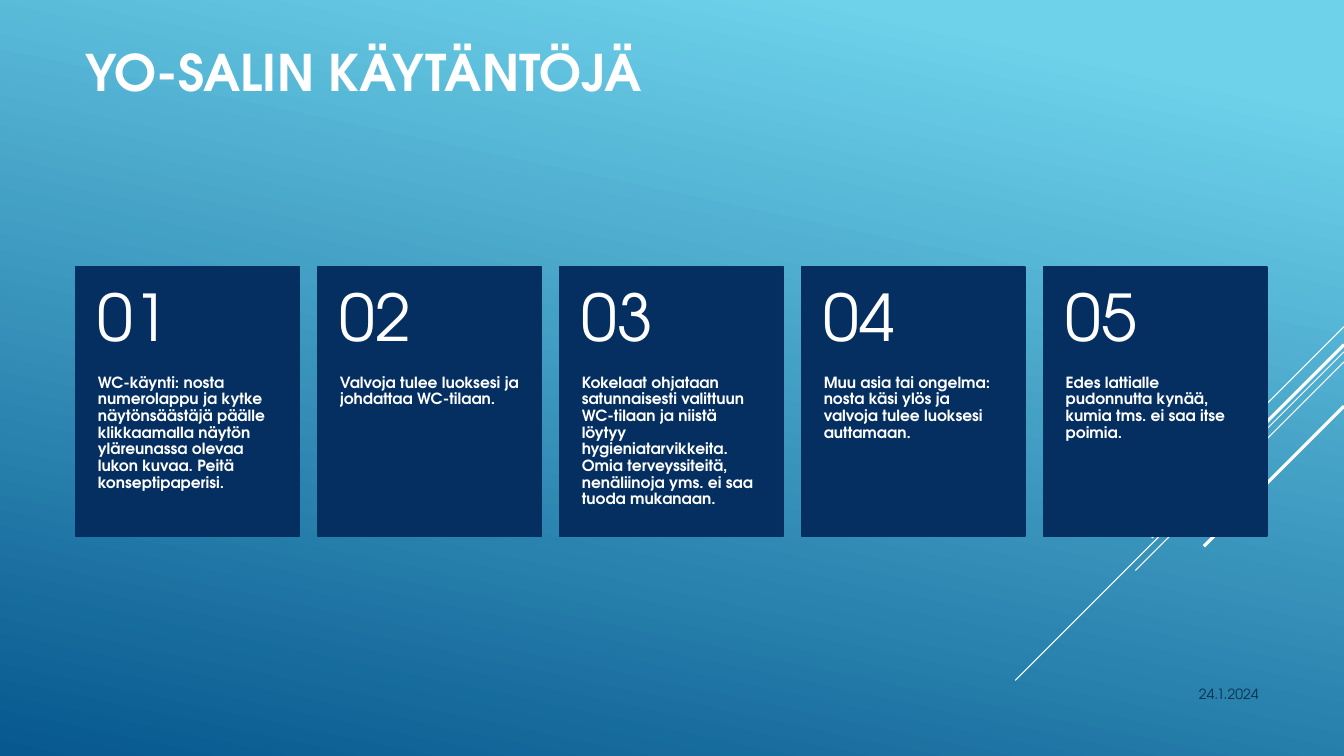
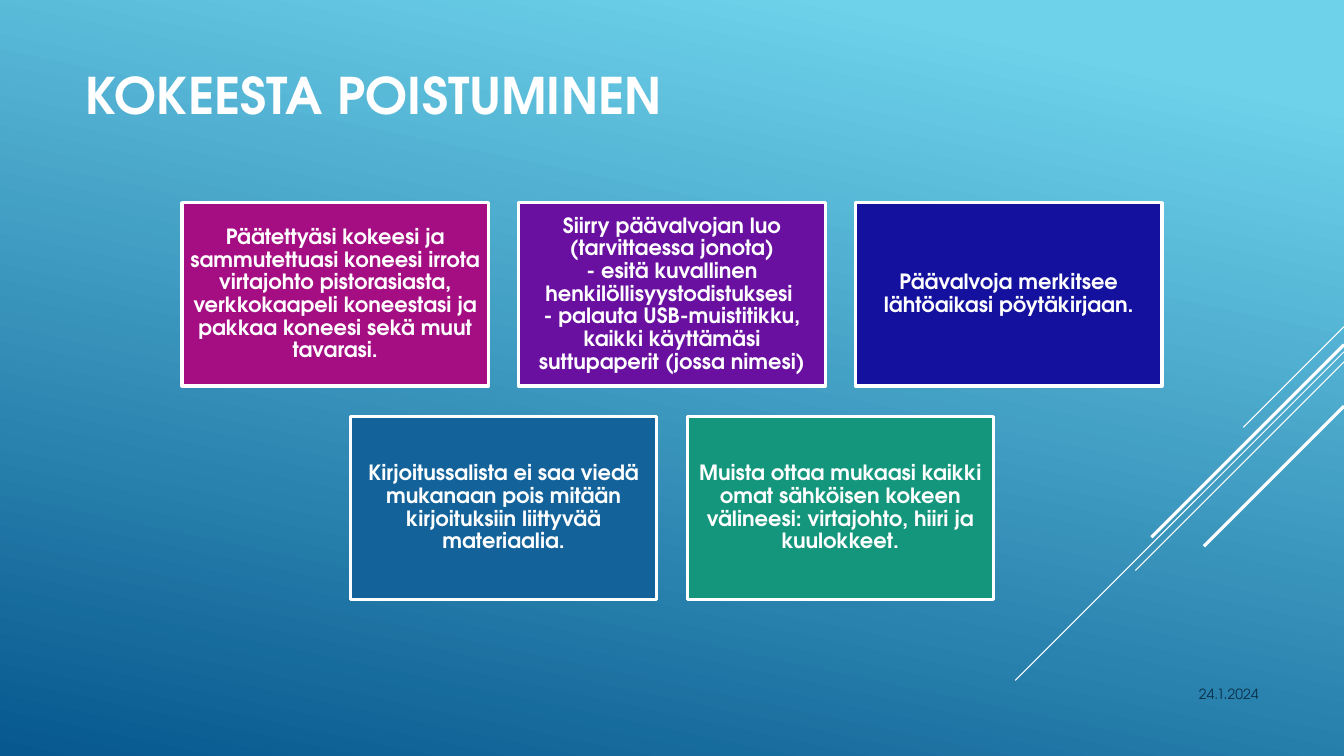
"""Build two slides on exam hall practices and leaving the exam."""
from pptx import Presentation
from pptx.dml.color import RGBColor
from pptx.enum.shapes import MSO_CONNECTOR as Connector, MSO_SHAPE as Shape
from pptx.enum.text import MSO_ANCHOR as Anchor, PP_ALIGN as Align
from pptx.oxml.ns import qn
from pptx.util import Inches, Pt

FONT = "TeX Gyre Adventor"
COLORS = {
    "sky": "6ED2EB", "deep": "06588E", "white": "FFFFFF", "date": "0A304A",
    "navy": "052F61", "magenta": "A50E82", "purple": "6A10A1",
    "indigo": "13119D", "blue": "13639A", "green": "14967C",
}
SLIDE_WIDTH, SLIDE_HEIGHT = 13.33, 7.5
DATE = "24.1.2024"
RAYS = [(3.24, 1.0, 0.75), (3.49, 3.26, 0.75), (3.59, 2.07, 0.75),
        (3.42, 1.91, 2.25), (4.03, 1.39, 2.25)]

PRACTICES_TITLE = "YO-SALIN KÄYTÄNTÖJÄ"
PRACTICES = [
    "WC-käynti: nosta numerolappu ja kytke näytönsäästäjä päälle klikkaamalla "
    "näytön yläreunassa olevaa lukon kuvaa. Peitä konseptipaperisi.",
    "Valvoja tulee luoksesi ja johdattaa WC-tilaan.",
    "Kokelaat ohjataan satunnaisesti valittuun WC-tilaan ja niistä löytyy "
    "hygieniatarvikkeita. Omia terveyssiteitä, nenäliinoja yms. ei saa tuoda mukanaan.",
    "Muu asia tai ongelma: nosta käsi ylös ja valvoja tulee luoksesi auttamaan.",
    "Edes lattialle pudonnutta kynää, kumia tms. ei saa itse poimia.",
]

LEAVING_TITLE = "KOKEESTA POISTUMINEN"
LEAVING_ROWS = [
    [("magenta", "Päätettyäsi kokeesi ja sammutettuasi koneesi irrota virtajohto "
      "pistorasiasta, verkkokaapeli koneestasi ja pakkaa koneesi sekä muut tavarasi."),
     ("purple", "Siirry päävalvojan luo (tarvittaessa jonota)\v- esitä kuvallinen "
      "henkilöllisyystodistuksesi \v- palauta USB-muistitikku, kaikki käyttämäsi "
      "suttupaperit (jossa nimesi)"),
     ("indigo", "Päävalvoja merkitsee lähtöaikasi pöytäkirjaan.")],
    [("blue", "Kirjoitussalista ei saa viedä mukanaan pois mitään kirjoituksiin "
      "liittyvää materiaalia."),
     ("green", "Muista ottaa mukaasi kaikki omat sähköisen kokeen välineesi: "
      "virtajohto, hiiri ja kuulokkeet.")],
]

TITLE_STYLE = {"size": 36, "bold": True, "anchor": Anchor.MIDDLE, "spacing": 0.9}
DATE_STYLE = {"size": 10, "color": "date", "align": Align.RIGHT}
NUMBER_STYLE = {"size": 46, "anchor": Anchor.MIDDLE, "spacing": 0.9,
                "insets": (0.22, 0.18, 0.22, 0.18)}
PRACTICE_STYLE = {"size": 11, "bold": True, "spacing": 0.9,
                  "insets": (0.22, 1.07, 0.22, 0.36)}
LEAVING_STYLE = {"size": 15, "bold": True, "spacing": 0.9, "align": Align.CENTER,
                 "anchor": Anchor.MIDDLE, "insets": (0.06,) * 4}


def rgb(name):
    return RGBColor.from_string(COLORS[name])


def write(shape, text, size, bold=False, color="white", align=Align.LEFT,
          anchor=Anchor.TOP, spacing=1.0, insets=(0.1, 0.05, 0.1, 0.05)):
    frame = shape.text_frame
    frame.word_wrap = True
    frame.vertical_anchor = anchor
    for side, inset in zip(("left", "top", "right", "bottom"), insets):
        setattr(frame, f"margin_{side}", Inches(inset))
    para = frame.paragraphs[0]
    para.text = text
    para.alignment = align
    para.line_spacing = spacing
    for span in para.runs:
        for name, value in {"name": FONT, "size": Pt(size), "bold": bold}.items():
            setattr(span.font, name, value)
        span.font.color.rgb = rgb(color)


def add_text(page, area, text, style):
    box = page.shapes.add_textbox(*map(Inches, area))
    write(box, text, **style)


def add_card(page, area, fill, line, line_width, text, style):
    card = page.shapes.add_shape(Shape.RECTANGLE, *map(Inches, area))
    card.shadow.inherit = False
    card.fill.solid()
    card.fill.fore_color.rgb = rgb(fill)
    card.line.color.rgb = rgb(line)
    card.line.width = Pt(line_width)
    write(card, text, **style)


def add_ray(page, top, reach, width):
    ends = (SLIDE_WIDTH, top, SLIDE_WIDTH - reach, top + reach)
    ray = page.shapes.add_connector(Connector.STRAIGHT, *map(Inches, ends))
    ray.line.color.rgb = rgb("white")
    ray.line.width = Pt(width)
    properties = ray._element.spPr
    properties.append(properties.makeelement(qn("a:effectLst"), {}))


def add_page(deck, title, title_top, title_height):
    page = deck.slides.add_slide(deck.slide_layouts[6])
    fill = page.background.fill
    fill.gradient()
    fill.gradient_angle = 258
    for stop, (position, color) in zip(fill.gradient_stops, [(0.1, "sky"), (1.0, "deep")]):
        stop.position = position
        stop.color.rgb = rgb(color)
    for ray in RAYS:
        add_ray(page, *ray)
    add_text(page, (0.75, title_top, 9.33, title_height), title, TITLE_STYLE)
    add_text(page, (10.83, 6.75, 1.75, 0.4), DATE, DATE_STYLE)
    return page


def add_practices(deck):
    page = add_page(deck, PRACTICES_TITLE, 0.22, 1.06)
    left, top, width, height, gap = 0.75, 2.65, 2.22, 2.67, 0.18
    for index, text in enumerate(PRACTICES):
        x = left + index * (width + gap)
        add_card(page, (x, top, width, height), "navy", "navy", 1.25, text, PRACTICE_STYLE)
        add_text(page, (x, top, width, 1.07), f"{index + 1:02}", NUMBER_STYLE)


def add_leaving(deck):
    page = add_page(deck, LEAVING_TITLE, 0.15, 1.65)
    top, width, height, gap = 2.01, 3.04, 1.82, 0.3
    for row, cards in enumerate(LEAVING_ROWS):
        row_width = len(cards) * (width + gap) - gap
        left = (SLIDE_WIDTH - row_width) / 2
        y = top + row * (height + gap)
        for column, (color, text) in enumerate(cards):
            x = left + column * (width + gap)
            add_card(page, (x, y, width, height), color, "white", 2.25, text, LEAVING_STYLE)


def main():
    deck = Presentation()
    deck.slide_width, deck.slide_height = Inches(SLIDE_WIDTH), Inches(SLIDE_HEIGHT)
    add_practices(deck)
    add_leaving(deck)
    deck.save("out.pptx")


if __name__ == "__main__":
    main()
